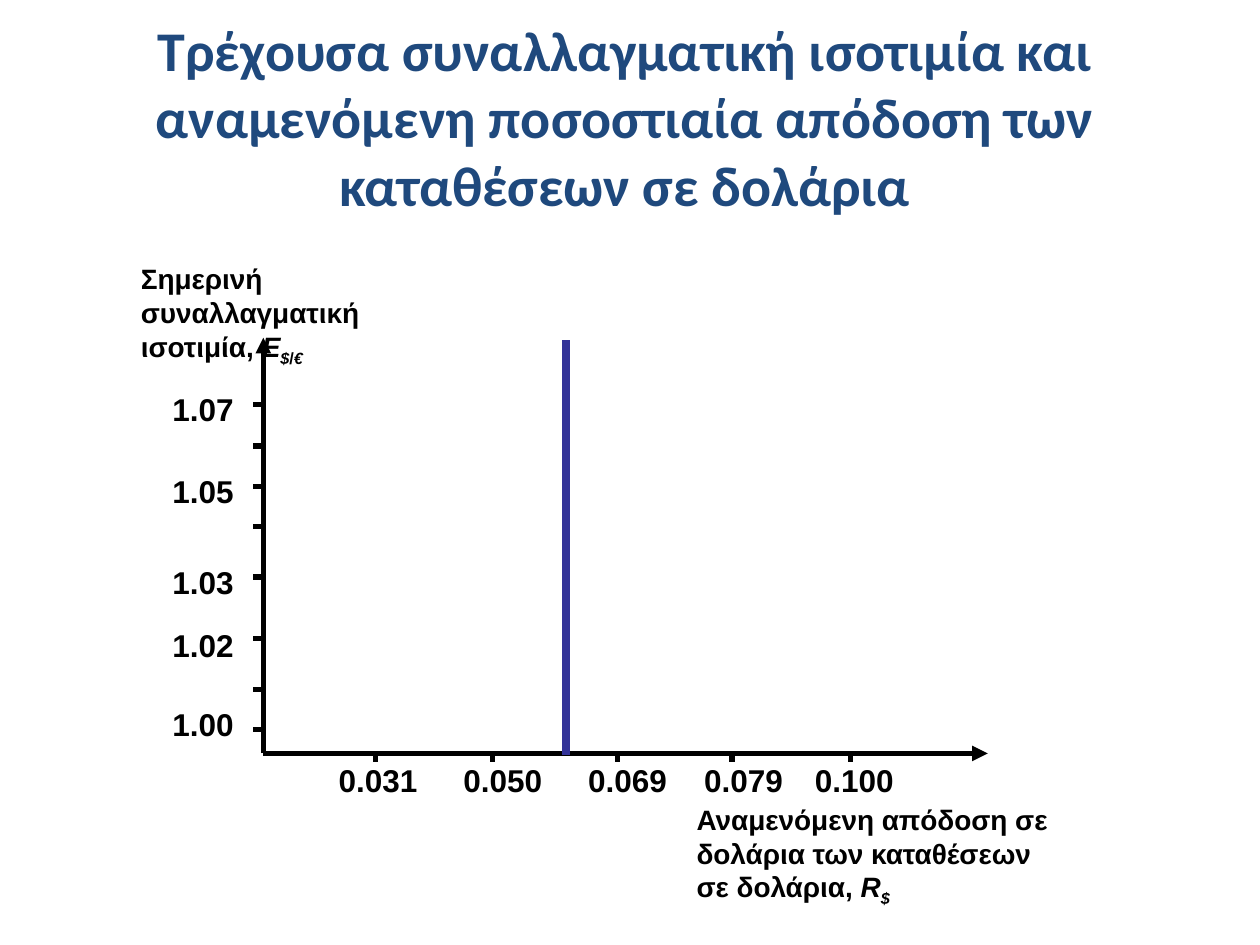
from dataclasses import dataclass

from lxml import etree
from pptx import Presentation
from pptx.dml.color import RGBColor
from pptx.enum import shapes, text
from pptx.oxml.ns import qn
from pptx.util import Inches, Pt


@dataclass(frozen=True)
class Theme:
    heading: RGBColor = RGBColor(0x1F, 0x49, 0x7D)
    ink: RGBColor = RGBColor(0, 0, 0)
    curve: RGBColor = RGBColor(0x33, 0x33, 0x99)
    heading_font: str = "Calibri"
    body_font: str = "Arial"
    heading_size: int = 32
    tick_size: int = 18
    caption_size: int = 16
    axis_width: float = 3
    curve_width: float = 4.5


@dataclass(frozen=True)
class Run:
    words: str
    italic: bool = False
    subscript: bool = False


@dataclass(frozen=True)
class Box:
    left: float
    top: float
    width: float
    height: float


@dataclass(frozen=True)
class TickLabel:
    words: str
    offset: float


THEME = Theme()
ORIGIN_X, ORIGIN_Y = 2.09, 5.98
AXIS_TOP, AXIS_RIGHT = 2.68, 7.84
RETURN_X = 4.49
TICK_X, TICK_Y = 0.07, 0.08

RATE_TICKS = (3.21, 3.54, 3.86, 4.18, 4.58, 5.07, 5.47, 5.79)
RATE_LABELS = (
    TickLabel("1.07", 3.05),
    TickLabel("1.05", 3.7),
    TickLabel("1.03", 4.42),
    TickLabel("1.02", 4.92),
    TickLabel("1.00", 5.55),
)
RETURN_TICKS = (2.98, 3.91, 4.9, 5.81, 6.75)
RETURN_LABELS = (
    TickLabel("0.031", 2.59),
    TickLabel("0.050", 3.58),
    TickLabel("0.069", 4.57),
    TickLabel("0.079", 5.49),
    TickLabel("0.100", 6.37),
)
RATE_CAPTION = (
    (Run("Σημερινή"),),
    (Run("συναλλαγματική"),),
    (
        Run("ισοτιμία, "),
        Run("E", italic=True),
        Run("$", italic=True, subscript=True),
        Run("/", subscript=True),
        Run("€", italic=True, subscript=True),
    ),
)
RETURN_CAPTION = (
    (
        Run("Αναμενόμενη απόδοση σε δολάρια των καταθέσεων σε δολάρια, "),
        Run("R", italic=True),
        Run("$", italic=True, subscript=True),
    ),
)


def place(shape, box: Box) -> None:
    shape.left, shape.top = Inches(box.left), Inches(box.top)
    shape.width, shape.height = Inches(box.width), Inches(box.height)


def add_run(paragraph, run: Run, font_name: str, size: int, color: RGBColor) -> None:
    piece = paragraph.add_run()
    piece.text = run.words
    font = piece.font
    font.name, font.size, font.bold = font_name, Pt(size), True
    font.italic = run.italic
    font.color.rgb = color
    if run.subscript:
        font._element.set("baseline", "-25000")


def add_title(slide, words: str) -> None:
    title = slide.shapes.title
    place(title, Box(0.17, 0.3, 9.58, 1.25))
    frame = title.text_frame
    frame.word_wrap = True
    frame.auto_size = text.MSO_AUTO_SIZE.NONE
    frame.vertical_anchor = text.MSO_ANCHOR.MIDDLE
    paragraph = frame.paragraphs[0]
    paragraph.alignment = text.PP_ALIGN.CENTER
    add_run(paragraph, Run(words), THEME.heading_font, THEME.heading_size, THEME.heading)


def add_label(slide, box: Box, lines: tuple, size: int, wrap: bool = False) -> None:
    label = slide.shapes.add_textbox(0, 0, 0, 0)
    place(label, box)
    frame = label.text_frame
    frame.word_wrap = wrap
    frame.auto_size = text.MSO_AUTO_SIZE.SHAPE_TO_FIT_TEXT
    for index, line in enumerate(lines):
        paragraph = frame.add_paragraph() if index else frame.paragraphs[0]
        for run in line:
            add_run(paragraph, run, THEME.body_font, size, THEME.ink)


def add_line(slide, x1: float, y1: float, x2: float, y2: float,
             color: RGBColor = THEME.ink, width: float = THEME.axis_width,
             arrow: bool = False) -> None:
    """Draw a straight line, with an optional arrowhead at its second end."""
    line = slide.shapes.add_connector(
        shapes.MSO_CONNECTOR.STRAIGHT, Inches(x1), Inches(y1), Inches(x2), Inches(y2))
    line.line.color.rgb = color
    line.line.width = Pt(width)
    properties = line._element.spPr
    if arrow:
        etree.SubElement(properties.find(qn("a:ln")), qn("a:tailEnd"), type="triangle")
    etree.SubElement(properties, qn("a:effectLst"))


def add_axes(slide) -> None:
    add_line(slide, ORIGIN_X, ORIGIN_Y, ORIGIN_X, AXIS_TOP, arrow=True)
    add_line(slide, ORIGIN_X, ORIGIN_Y, AXIS_RIGHT, ORIGIN_Y, arrow=True)
    for y in RATE_TICKS:
        add_line(slide, ORIGIN_X - TICK_Y, y, ORIGIN_X, y)
    for x in RETURN_TICKS:
        add_line(slide, x, ORIGIN_Y, x, ORIGIN_Y + TICK_X)
    for tick in RATE_LABELS:
        add_label(slide, Box(1.27, tick.offset, 0.7, 0.4),
                  ((Run(tick.words),),), THEME.tick_size)
    for tick in RETURN_LABELS:
        add_label(slide, Box(tick.offset, 5.99, 0.84, 0.4),
                  ((Run(tick.words),),), THEME.tick_size)


def main() -> None:
    deck = Presentation()
    deck.slide_width, deck.slide_height = Inches(10), Inches(7.5)
    slide = deck.slides.add_slide(deck.slide_layouts[5])
    add_title(slide, "Τρέχουσα συναλλαγματική ισοτιμία και αναμενόμενη "
                     "ποσοστιαία απόδοση των καταθέσεων σε δολάρια")
    add_label(slide, Box(5.43, 6.32, 3.14, 1.1), RETURN_CAPTION,
              THEME.caption_size, wrap=True)
    add_label(slide, Box(1.02, 2.03, 2.03, 0.9), RATE_CAPTION, THEME.caption_size)
    add_axes(slide)
    add_line(slide, RETURN_X, 5.99, RETURN_X, 2.7, THEME.curve, THEME.curve_width)
    deck.save("out.pptx")


if __name__ == "__main__":
    main()
